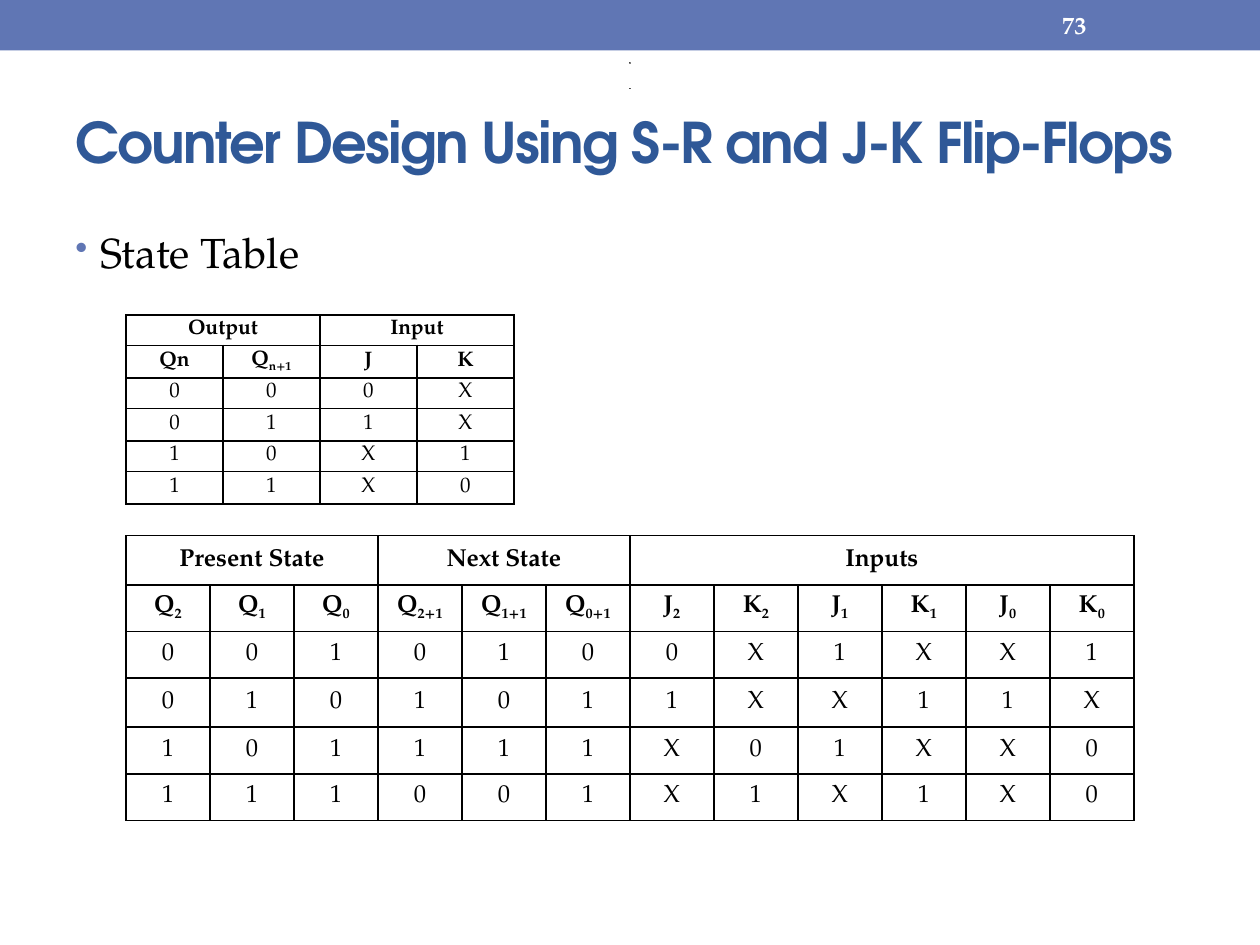
from lxml import etree
from pptx import Presentation
from pptx import util as u
from pptx.dml.color import RGBColor
from pptx.enum import shapes, text
from pptx.oxml import ns

Cm, Pt = u.Cm, u.Pt
SERIF, SANS = "TeX Gyre Pagella", "TeX Gyre Adventor"
BLUE, NAVY, BLACK, WHITE = "6076B4", "2F5897", "000000", "FFFFFF"

# Content: an underscore starts a subscript; header groups are (label, columns)
TITLE = "Counter Design Using S-R and J-K Flip-Flops"
BULLET = "State Table"
PAGE_NUMBER = "73"
STATES = {
    "at": (2.54, 10.8), "width": 20.32, "size": 14,
    "heights": [0.99, 0.94, 0.94, 0.99, 0.94, 0.94],
    "groups": [("Present State", 3), ("Next State", 3), ("Inputs", 6)],
    "rows": ["Q_2 Q_1 Q_0 Q_2+1 Q_1+1 Q_0+1 J_2 K_2 J_1 K_1 J_0 K_0",
             "0 0 1 0 1 0 0 X 1 X X 1",
             "0 1 0 1 0 1 1 X X 1 1 X",
             "1 0 1 1 1 1 X 0 1 X X 0",
             "1 1 1 0 0 1 X 1 X 1 X 0"],
}
EXCITATION = {
    "at": (2.54, 6.35), "width": 7.82, "size": 12,
    "heights": [0.61, 0.66] * 3,
    "groups": [("Output", 2), ("Input", 2)],
    "rows": ["Qn Q_n+1 J K", "0 0 0 X", "0 1 1 X", "1 0 X 1", "1 1 X 0"],
}


def color(value):
    return RGBColor.from_string(value)


def add_xml(parent, tag, **attributes):
    return etree.SubElement(parent, ns.qn(tag), attributes)


def style(para, size, ink, bold=False, face=SERIF):
    font = para.font
    font.name, font.size, font.bold = face, Pt(size), bold
    font.color.rgb = color(ink)


def add_rectangle(page, left, top, width, height):
    box = page.shapes.add_shape(shapes.MSO_SHAPE.RECTANGLE,
                                Cm(left), Cm(top), Cm(width), Cm(height))
    box.shadow.inherit = False
    box.fill.solid()
    box.fill.fore_color.rgb = color(BLUE)
    return box


def add_text(page, words, left, top, width, height, anchor):
    box = page.shapes.add_textbox(Cm(left), Cm(top), Cm(width), Cm(height))
    frame = box.text_frame
    frame.word_wrap = True
    frame.vertical_anchor = anchor
    para = frame.paragraphs[0]
    para.add_run().text = words
    return para


def fill_cell(cell, words, size, bold):
    cell.margin_left = cell.margin_right = Cm(0.18)
    cell.margin_top = cell.margin_bottom = 0
    cell.vertical_anchor = text.MSO_ANCHOR.MIDDLE
    para = cell.text_frame.paragraphs[0]
    para.alignment = text.PP_ALIGN.CENTER
    style(para, size, BLACK, bold)
    base, _, subscript = words.partition("_")
    if base:
        para.add_run().text = base
    if subscript:
        span = para.add_run()
        span.text = subscript
        span.font._element.set("baseline", "-25000")


def rule_cell(cell):
    properties = cell._tc.get_or_add_tcPr()
    for side in ("a:lnL", "a:lnR", "a:lnT", "a:lnB"):
        line = add_xml(properties, side, w=str(Pt(1)))
        add_xml(add_xml(line, "a:solidFill"), "a:srgbClr", val=BLACK)
    cell.fill.background()


def add_grid(page, data):
    rows = [row.split() for row in data["rows"]]
    count = len(rows[0])
    left, top = data["at"]
    grid = page.shapes.add_table(
        len(rows) + 1, count, Cm(left), Cm(top),
        Cm(data["width"]), Cm(sum(data["heights"]))).table
    grid.first_row = grid.horz_banding = False
    for column in grid.columns:
        column.width = Cm(data["width"] / count)
    for row, height in zip(grid.rows, data["heights"]):
        row.height = Cm(height)
    for cell in grid.iter_cells():
        rule_cell(cell)

    # Merged group headings, then one row of names and the values
    start = 0
    for label, span in data["groups"]:
        grid.cell(0, start).merge(grid.cell(0, start + span - 1))
        fill_cell(grid.cell(0, start), label, data["size"], True)
        start += span
    for r, row in enumerate(rows, 1):
        for c, words in enumerate(row):
            fill_cell(grid.cell(r, c), words, data["size"], r == 1)


def main():
    deck = Presentation()
    deck.slide_width, deck.slide_height = Cm(25.4), Cm(19.05)
    page = deck.slides.add_slide(deck.slide_layouts[6])

    # Top band
    add_rectangle(page, 0, 0, 25.4, 1.02).line.fill.background()

    # Title
    para = add_text(page, TITLE, 1.27, 1.47, 22.86, 2.74, text.MSO_ANCHOR.MIDDLE)
    style(para, 32, NAVY, True, SANS)
    para.runs[0].font._element.set("spc", "-100")

    # Bulleted heading
    para = add_text(page, BULLET, 1.27, 4.45, 22.86, 13.54, text.MSO_ANCHOR.TOP)
    para.alignment = text.PP_ALIGN.JUSTIFY
    para.space_before = Pt(4.8)
    properties = para._p.get_or_add_pPr()
    properties.set("marL", str(Cm(0.5)))
    properties.set("indent", str(Cm(-0.5)))
    add_xml(add_xml(properties, "a:buClr"), "a:srgbClr", val=BLUE)
    add_xml(properties, "a:buSzPct", val="85000")
    add_xml(properties, "a:buChar", char="•")
    style(para, 24, BLACK)

    # Page number
    para = add_text(page, PAGE_NUMBER, 21.16, 0.05, 2.97, 0.91, text.MSO_ANCHOR.MIDDLE)
    style(para, 14, WHITE, True)

    # Two dots under the band
    for top in (1.27, 1.78):
        dot = add_rectangle(page, 12.7, top, 0, 0)
        dot.line.color.rgb = color(BLACK)
        dot.line.width = Pt(0.75)

    for data in (STATES, EXCITATION):
        add_grid(page, data)
    deck.save("out.pptx")


if __name__ == "__main__":
    main()
